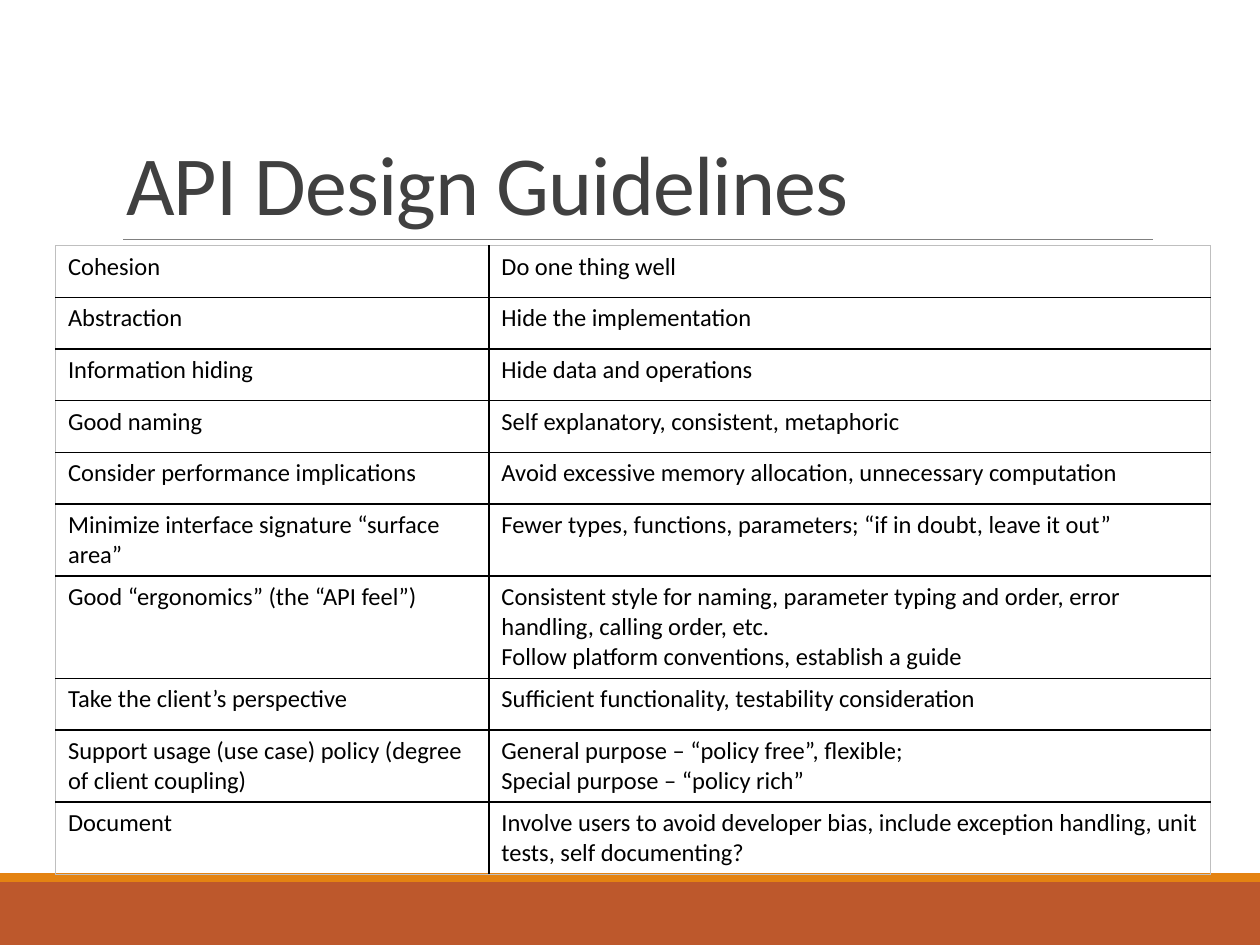
from lxml import etree
from pptx import Presentation, util as u
from pptx.dml.color import RGBColor
from pptx.enum import shapes, text
from pptx.oxml import ns

HUES = {"ink": "000000", "title": "404040", "rule": "808080", "edge": "BFBFBF",
        "rust": "BD582C", "amber": "E48312"}
ROWS = [
    ("Cohesion", "Do one thing well"),
    ("Abstraction", "Hide the implementation"),
    ("Information hiding", "Hide data and operations"),
    ("Good naming", "Self explanatory, consistent, metaphoric"),
    ("Consider performance implications",
     "Avoid excessive memory allocation, unnecessary computation"),
    ("Minimize interface signature “surface area”",
     "Fewer types, functions, parameters; “if in doubt, leave it out”"),
    ("Good “ergonomics” (the “API feel”)",
     "Consistent style for naming, parameter typing and order, error handling, "
     "calling order, etc.\nFollow platform conventions, establish a guide"),
    ("Take the client’s perspective",
     "Sufficient functionality, testability consideration"),
    ("Support usage (use case) policy (degree of client coupling)",
     "General purpose – “policy free”, flexible;\vSpecial purpose – “policy rich”"),
    ("Document",
     "Involve users to avoid developer bias, include exception handling, "
     "unit tests, self documenting?"),
]


class Deck:
    """Style and current slide; lengths are in a grid of one-inch units."""

    def __init__(self, wide, high):
        self.prs = Presentation()
        self.prs.slide_width, self.prs.slide_height = u.Inches(wide), u.Inches(high)
        self.slide = self.prs.slides.add_slide(self.prs.slide_layouts[5])

    def hue(self, name):
        return RGBColor.from_string(HUES[name])

    def font(self, para, hue, **style):
        for key, val in {"name": "Calibri", **style}.items():
            setattr(para.font, key, val)
        para.font.color.rgb = self.hue(hue)

    def title(self, words, *box):
        shape = self.slide.shapes.title
        for key, val in zip(("left", "top", "width", "height"), box):
            setattr(shape, key, u.Inches(val))
        frame = shape.text_frame
        frame.text = words
        frame.auto_size = text.MSO_AUTO_SIZE.NONE
        frame.vertical_anchor = text.MSO_ANCHOR.BOTTOM
        para = frame.paragraphs[0]
        para.alignment, para.line_spacing = text.PP_ALIGN.LEFT, 0.85
        self.font(para, "title", size=u.Pt(48))
        para.runs[0].font._element.set("spc", "-50")

    def bar(self, hue, *box):
        shape = self.slide.shapes.add_shape(
            shapes.MSO_SHAPE.RECTANGLE, *map(u.Inches, box))
        shape.shadow.inherit = False
        shape.fill.solid()
        shape.fill.fore_color.rgb = self.hue(hue)
        shape.line.fill.background()

    def rule(self, left, right, y):
        line = self.slide.shapes.add_connector(
            shapes.MSO_CONNECTOR.STRAIGHT, *map(u.Inches, (left, y, right, y)))
        line.line.color.rgb = self.hue("rule")
        line.line.width = u.Pt(0.5)
        etree.SubElement(line._element.spPr, ns.qn("a:effectLst"))

    def edges(self, cell, outer):
        """Grey hairlines on the outside, black lines between cells."""
        props = cell._tc.get_or_add_tcPr()
        for spot, (side, out) in enumerate(zip("LRTB", outer)):
            line = etree.Element(ns.qn("a:ln" + side),
                                 w=str(u.Pt(0.5 if out else 1)))
            fill = etree.SubElement(line, ns.qn("a:solidFill"))
            etree.SubElement(fill, ns.qn("a:srgbClr"),
                             val=HUES["edge" if out else "ink"])
            props.insert(spot, line)

    def table(self, rows, left, top, cols, highs):
        table = self.slide.shapes.add_table(
            len(rows), len(cols),
            *map(u.Inches, (left, top, sum(cols), sum(highs)))).table
        table.first_row = table.horz_banding = False
        for col, wide in zip(table.columns, cols):
            col.width = u.Inches(wide)
        for r, (row, high) in enumerate(zip(rows, highs)):
            table.rows[r].height = u.Inches(high)
            for c, words in enumerate(row):
                cell = table.cell(r, c)
                cell.text_frame.text = words
                for para in cell.text_frame.paragraphs:
                    self.font(para, "ink", size=u.Pt(14))
                cell.fill.background()
                self.edges(cell, (c == 0, c == len(cols) - 1,
                                  r == 0, r == len(rows) - 1))


def main():
    deck = Deck(10, 7.5)
    # Footer bands and rule under the title
    deck.bar("rust", 0, 7, 10, 0.5)
    deck.bar("amber", 0, 6.93, 10, 0.07)
    deck.rule(0.98, 9.15, 1.9)
    # Title
    deck.title("API Design Guidelines", 0.9, 0.31, 8.25, 1.59)
    # Guidelines; rows grow to fit longer text
    deck.table(ROWS, 0.44, 1.95, (3.44, 5.73), [0.41] * len(ROWS))
    deck.prs.save("out.pptx")


if __name__ == "__main__":
    main()
